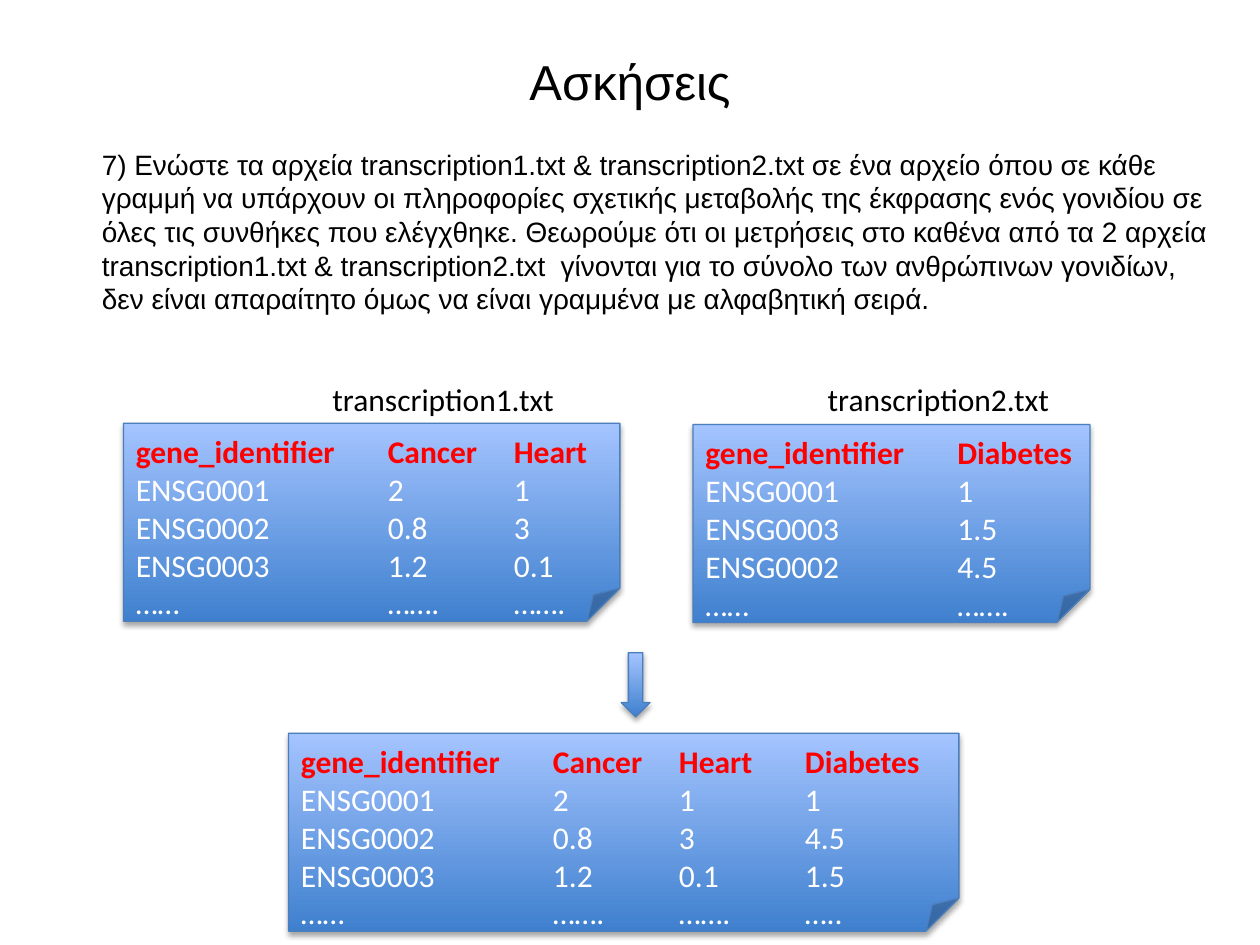
"""Build the exercise slide on merging two transcription files."""
from dataclasses import dataclass

from lxml.etree import SubElement
from pptx import Presentation
from pptx.dml.color import RGBColor
from pptx.enum.shapes import MSO_SHAPE
from pptx.enum.text import MSO_ANCHOR, PP_ALIGN
from pptx.oxml.ns import qn
from pptx.util import Inches, Pt

COLORS = {
    "black": "000000",
    "white": "FFFFFF",
    "header": "FF0000",
    "outline": "4B7EBC",
    "deep": "3F80CE",
    "pale": "A4C4FF",
}
TAB_STEP = 0.5
TAB_COUNT = 9
TITLE = "Ασκήσεις"
QUESTION = (
    "7) Ενώστε τα αρχεία transcription1.txt & transcription2.txt σε ένα αρχείο "
    "όπου σε κάθε γραμμή να υπάρχουν οι πληροφορίες σχετικής μεταβολής της "
    "έκφρασης ενός γονιδίου σε όλες τις συνθήκες που ελέγχθηκε. Θεωρούμε ότι οι "
    "μετρήσεις στο καθένα από τα 2 αρχεία transcription1.txt & "
    "transcription2.txt  γίνονται για το σύνολο των ανθρώπινων γονιδίων, δεν "
    "είναι απαραίτητο όμως να είναι γραμμένα με αλφαβητική σειρά."
)


@dataclass(frozen=True)
class Area:
    left: float
    top: float
    width: float
    height: float

    def lengths(self) -> tuple:
        return tuple(map(Inches, (self.left, self.top, self.width, self.height)))


@dataclass(frozen=True)
class GeneFile:
    area: Area
    conditions: tuple
    rows: tuple

    def lines(self) -> list:
        header = "\t".join(("gene_identifier",) + self.conditions)
        return [header] + ["\t\t".join(row) for row in self.rows]


@dataclass(frozen=True)
class Label:
    text: str
    area: Area


FILES = (
    GeneFile(Area(0.98, 3.36, 3.94, 1.57), ("Cancer", "Heart"), (
        ("ENSG0001", "2", "1"),
        ("ENSG0002", "0.8", "3"),
        ("ENSG0003", "1.2", "0.1"),
        ("……\t\t", "…….", "……."),
    )),
    GeneFile(Area(5.5, 3.37, 3.15, 1.57), ("Diabetes",), (
        ("ENSG0001", "1"),
        ("ENSG0003", "1.5"),
        ("ENSG0002", "4.5"),
        ("……\t\t", "……."),
    )),
    GeneFile(Area(2.29, 5.82, 5.32, 1.57), ("Cancer", "Heart", "Diabetes"), (
        ("ENSG0001", "2", "1", "1"),
        ("ENSG0002", "0.8", "3", "4.5"),
        ("ENSG0003", "1.2", "0.1", "1.5"),
        ("……\t\t", "…….", "…….", "….."),
    )),
)
LABELS = (
    Label("transcription1.txt", Area(2.54, 2.97, 1.99, 0.4)),
    Label("transcription2.txt", Area(6.47, 2.97, 1.99, 0.4)),
)
ARROW = Area(4.93, 5.18, 0.23, 0.51)


def color(name: str) -> RGBColor:
    return RGBColor.from_string(COLORS[name])


def format_runs(para, font: str, size: float, shade: str, bold: bool = False) -> None:
    for span in para.runs:
        span.font.name = font
        span.font.size = Pt(size)
        span.font.bold = bold
        span.font.color.rgb = color(shade)


def add_text(page, text: str, area: Area, font: str, size: float, wrap: bool):
    box = page.shapes.add_textbox(*area.lengths())
    box.text_frame.word_wrap = wrap
    box.text_frame.text = text
    para = box.text_frame.paragraphs[0]
    format_runs(para, font, size, "black")
    return para


def add_glossy_shape(page, preset: MSO_SHAPE, area: Area):
    shape = page.shapes.add_shape(preset, *area.lengths())
    shape.fill.gradient()
    shape.fill.gradient_angle = 90
    for stop, shade, position in zip(shape.fill.gradient_stops, ("deep", "pale"), (0, 1)):
        stop.color.rgb = color(shade)
        stop.position = position
    shape.line.color.rgb = color("outline")
    shape.line.width = Pt(0.75)
    shape.shadow.inherit = False
    effects = shape._element.spPr.find(qn("a:effectLst"))
    shadow = SubElement(effects, qn("a:outerShdw"), blurRad=str(Pt(3.1)),
                        dist=str(Pt(1.8)), dir="5400000", rotWithShape="0")
    tint = SubElement(shadow, qn("a:srgbClr"), val=COLORS["black"])
    SubElement(tint, qn("a:alpha"), val="35000")
    return shape


def set_tab_stops(para) -> None:
    stops = SubElement(para._p.get_or_add_pPr(), qn("a:tabLst"))
    for number in range(1, TAB_COUNT + 1):
        SubElement(stops, qn("a:tab"), pos=str(Inches(number * TAB_STEP)), algn="l")


def add_gene_file(page, gene_file: GeneFile) -> None:
    sheet = add_glossy_shape(page, MSO_SHAPE.FOLDED_CORNER, gene_file.area)
    frame = sheet.text_frame
    frame.vertical_anchor = MSO_ANCHOR.TOP
    frame.margin_top = Inches(0.07)
    frame.margin_bottom = 0
    frame.text = "\n".join(gene_file.lines())
    for index, para in enumerate(frame.paragraphs):
        para.alignment = PP_ALIGN.JUSTIFY
        set_tab_stops(para)
        is_header = index == 0
        format_runs(para, "Calibri", 18, "header" if is_header else "white", is_header)


def add_title(page) -> None:
    title = page.shapes.title
    title.left, title.top, title.width, title.height = Area(0.5, 0.3, 9, 0.68).lengths()
    title.text_frame.text = TITLE
    title.text_frame.vertical_anchor = MSO_ANCHOR.MIDDLE
    para = title.text_frame.paragraphs[0]
    para.alignment = PP_ALIGN.CENTER
    format_runs(para, "Arial", 28, "black")


def main() -> None:
    deck = Presentation()
    deck.slide_width, deck.slide_height = Inches(10), Inches(7.5)
    page = deck.slides.add_slide(deck.slide_layouts[5])
    add_title(page)
    question = add_text(page, QUESTION, Area(0.21, 1.12, 9.61, 1.45), "Arial", 16, True)
    properties = question._p.get_or_add_pPr()
    properties.set("marL", str(Inches(0.5)))
    properties.set("lvl", "1")
    for gene_file in FILES:
        add_gene_file(page, gene_file)
    for label in LABELS:
        add_text(page, label.text, label.area, "Calibri", 18, False)
    add_glossy_shape(page, MSO_SHAPE.DOWN_ARROW, ARROW)
    deck.save("out.pptx")


if __name__ == "__main__":
    main()
